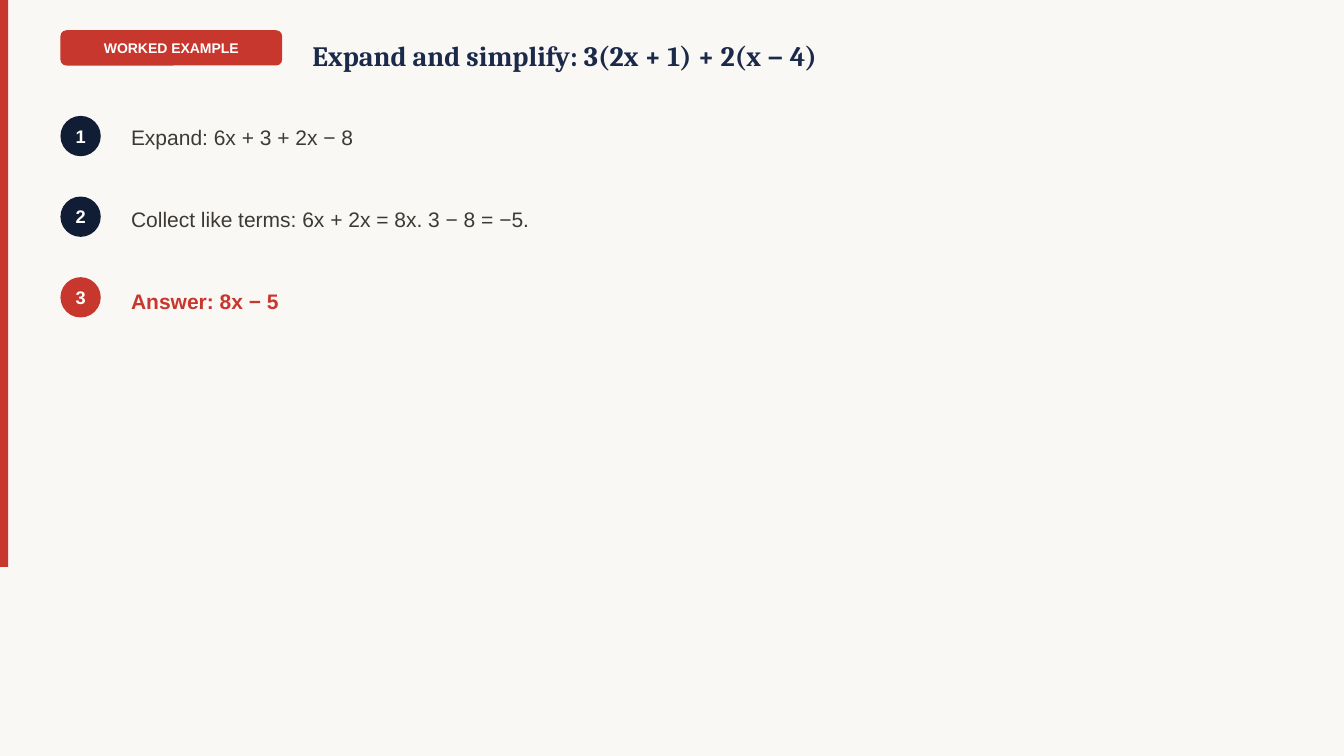
from dataclasses import dataclass

from lxml import etree
from pptx import Presentation
from pptx.dml.color import RGBColor
from pptx.enum.shapes import MSO_SHAPE
from pptx.enum.text import MSO_ANCHOR, MSO_AUTO_SIZE, PP_ALIGN
from pptx.oxml.ns import qn
from pptx.shapes.autoshape import Shape
from pptx.slide import Slide
from pptx.text.text import TextFrame, _Paragraph
from pptx.util import Pt

RECTANGLE = MSO_SHAPE.RECTANGLE
ROUNDED = MSO_SHAPE.ROUNDED_RECTANGLE
OVAL = MSO_SHAPE.OVAL
MIDDLE = MSO_ANCHOR.MIDDLE
NO_AUTOFIT = MSO_AUTO_SIZE.NONE
LEFT, CENTER = PP_ALIGN.LEFT, PP_ALIGN.CENTER

RED, NAVY, DARK_NAVY = "C8372D", "1B2A4A", "111D35"
CREAM, WHITE, GREY = "FAF8F5", "FFFFFF", "3D3A36"
SANS, SERIF = "Arial", "Cambria"

MARGIN = 43.2
STEP_TOP = 79.2
STEP_BOX_HEIGHT = 39.6
STEP_PITCH = 57.6
STEP_LINE_HEIGHT = 17.24
CIRCLE_SIZE = 28.8
CIRCLE_OFFSET = 3.6


@dataclass(frozen=True)
class Box:
    left: float
    top: float
    width: float
    height: float


@dataclass(frozen=True)
class Style:
    font: str
    size: float
    color: str
    bold: bool = False


@dataclass(frozen=True)
class Step:
    text: str
    circle_color: str
    style: Style


LABEL = Style(SANS, 10, WHITE, True)
HEADING = Style(SERIF, 20, NAVY, True)
NUMBER = Style(SANS, 13, WHITE, True)
WORKING = Style(SANS, 15, GREY)
ANSWER = Style(SANS, 15, RED, True)

STEPS = [
    Step("Expand: 6x + 3 + 2x − 8", DARK_NAVY, WORKING),
    Step("Collect like terms: 6x + 2x = 8x. 3 − 8 = −5.", DARK_NAVY, WORKING),
    Step("Answer: 8x − 5", RED, ANSWER),
]


def rgb(color: str) -> RGBColor:
    return RGBColor.from_string(color)


def place(shape: Shape, box: Box) -> None:
    shape.left, shape.top = Pt(box.left), Pt(box.top)
    shape.width, shape.height = Pt(box.width), Pt(box.height)


def prepare_frame(frame: TextFrame) -> None:
    frame.word_wrap = True
    frame.auto_size = NO_AUTOFIT
    frame.vertical_anchor = MIDDLE


def write(paragraph: _Paragraph, text: str, style: Style, alignment: PP_ALIGN) -> None:
    paragraph.text = text
    paragraph.alignment = alignment
    for run in paragraph.runs:
        run.font.name = style.font
        run.font.size = Pt(style.size)
        run.font.bold = style.bold
        run.font.color.rgb = rgb(style.color)


def remove_bullet(paragraph: _Paragraph) -> None:
    properties = paragraph._p.get_or_add_pPr()
    properties.set("marL", "0")
    properties.set("indent", "0")
    etree.SubElement(properties, qn("a:buNone"))


def add_filled(slide: Slide, kind: MSO_SHAPE, box: Box, color: str) -> Shape:
    shape = slide.shapes.add_shape(
        kind, Pt(box.left), Pt(box.top), Pt(box.width), Pt(box.height))
    shape.shadow.inherit = False
    shape.fill.solid()
    shape.fill.fore_color.rgb = rgb(color)
    shape.line.fill.background()
    return shape


def add_badge(slide: Slide, kind: MSO_SHAPE, box: Box, color: str,
              text: str, style: Style) -> Shape:
    badge = add_filled(slide, kind, box, color)
    frame = badge.text_frame
    prepare_frame(frame)
    frame.margin_left = frame.margin_right = Pt(0)
    frame.margin_top = frame.margin_bottom = Pt(0)
    write(frame.paragraphs[0], text, style, CENTER)
    return badge


def add_steps(slide: Slide) -> None:
    body = slide.placeholders[1]
    height = STEP_BOX_HEIGHT + STEP_PITCH * (len(STEPS) - 1)
    place(body, Box(86.4, STEP_TOP, 756, height))
    frame = body.text_frame
    prepare_frame(frame)
    for index, step in enumerate(STEPS):
        paragraph = frame.add_paragraph() if index else frame.paragraphs[0]
        remove_bullet(paragraph)
        write(paragraph, step.text, step.style, LEFT)
        paragraph.line_spacing = 1.0
        paragraph.space_before = Pt(STEP_PITCH - STEP_LINE_HEIGHT if index else 0)
        paragraph.space_after = Pt(0)
        circle_top = STEP_TOP + CIRCLE_OFFSET + index * STEP_PITCH
        add_badge(slide, OVAL, Box(MARGIN, circle_top, CIRCLE_SIZE, CIRCLE_SIZE),
                  step.circle_color, str(index + 1), NUMBER)


def main() -> None:
    presentation = Presentation()
    presentation.slide_width, presentation.slide_height = Pt(960), Pt(540)
    slide = presentation.slides.add_slide(presentation.slide_layouts[1])
    slide.background.fill.solid()
    slide.background.fill.fore_color.rgb = rgb(CREAM)

    # Accent bar and label
    add_filled(slide, RECTANGLE, Box(0, 0, 5.76, 405), RED)
    label = add_badge(slide, ROUNDED, Box(MARGIN, 21.6, 158.4, 25.2),
                      RED, "WORKED EXAMPLE", LABEL)
    label.adjustments[0] = 0.17

    # Heading
    title = slide.shapes.title
    place(title, Box(216, 21.6, 576, 36))
    prepare_frame(title.text_frame)
    write(title.text_frame.paragraphs[0],
          "Expand and simplify: 3(2x + 1) + 2(x − 4)", HEADING, LEFT)

    # Numbered steps
    add_steps(slide)

    presentation.save("out.pptx")


if __name__ == "__main__":
    main()
